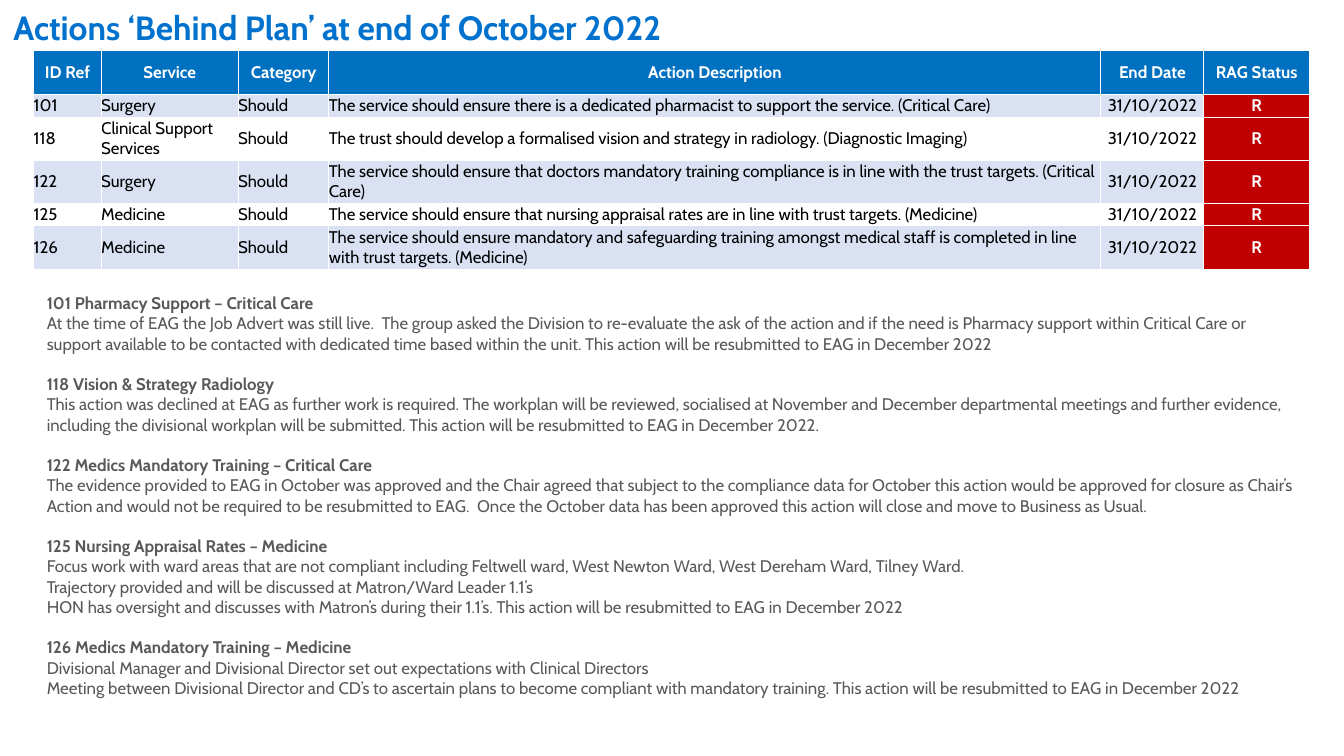
from lxml.etree import SubElement
from pptx import Presentation
from pptx.dml.color import RGBColor
from pptx.enum.text import MSO_ANCHOR as Anchor, MSO_AUTO_SIZE as AutoSize, PP_ALIGN as Align
from pptx.oxml.ns import qn
from pptx.util import Pt

COLORS = {
    "title": "0072CE", "header": "0070C0", "band": "D9E1F2", "red": "C00000",
    "white": "FFFFFF", "black": "000000", "note": "595959",
}


def style(para, color, size=9, bold=False, align=Align.LEFT):
    para.alignment = align
    para.font.name = "Cabin"
    para.font.size = Pt(size)
    para.font.bold = bold
    para.font.color.rgb = RGBColor.from_string(COLORS[color])


def add_borders(cell):
    properties = cell._tc.get_or_add_tcPr()
    for side in ("lnL", "lnR", "lnT", "lnB"):
        line = SubElement(properties, qn(f"a:{side}"), w=str(Pt(0.5)))
        fill = SubElement(line, qn("a:solidFill"))
        SubElement(fill, qn("a:srgbClr"), val=COLORS["white"])


deck = Presentation()
deck.slide_width, deck.slide_height = Pt(720), Pt(405)
page = deck.slides.add_slide(deck.slide_layouts[5])

title = page.shapes.title
title.left, title.top, title.width, title.height = Pt(0), Pt(0), Pt(702), Pt(36)
title.text_frame.text = "Actions ‘Behind Plan’ at end of October 2022"
title.text_frame.auto_size = AutoSize.NONE
title.text_frame.vertical_anchor = Anchor.TOP
style(title.text_frame.paragraphs[0], "title", size=18, bold=True)

headers = ["ID Ref", "Service", "Category", "Action Description", "End Date", "RAG Status"]
actions = [
    ("101", "Surgery", "The service should ensure there is a dedicated pharmacist to support the service. (Critical Care)"),
    ("118", "Clinical Support Services", "The trust should develop a formalised vision and strategy in radiology. (Diagnostic Imaging)"),
    ("122", "Surgery", "The service should ensure that doctors mandatory training compliance is in line with the trust targets. (Critical Care)"),
    ("125", "Medicine", "The service should ensure that nursing appraisal rates are in line with trust targets. (Medicine)"),
    ("126", "Medicine", "The service should ensure mandatory and safeguarding training amongst medical staff is completed in line with trust targets. (Medicine)"),
]
rows = [headers] + [
    [ref, service, "Should", description, "31/10/2022", "R"]
    for ref, service, description in actions
]
column_widths = [36.2, 73.4, 48.6, 413.6, 55.2, 56.6]
row_heights = [23.7, 12.2, 23.1, 23.1, 12.2, 23.1]

table = page.shapes.add_table(
    len(rows), len(headers), Pt(18), Pt(26.8), Pt(sum(column_widths)), Pt(sum(row_heights))
).table
table.first_row = table.horz_banding = False
for column, width in zip(table.columns, column_widths):
    column.width = Pt(width)
for row, height in zip(table.rows, row_heights):
    row.height = Pt(height)

for row_index, values in enumerate(rows):
    for column_index, value in enumerate(values):
        cell = table.cell(row_index, column_index)
        cell.text = value
        cell.vertical_anchor = Anchor.MIDDLE
        cell.margin_left = cell.margin_right = cell.margin_top = cell.margin_bottom = 0
        add_borders(cell)
        is_header, is_status = row_index == 0, column_index == 5
        strong = is_header or is_status
        centered = is_header or column_index >= 4
        style(cell.text_frame.paragraphs[0], "white" if strong else "black", bold=strong,
              align=Align.CENTER if centered else Align.LEFT)
        if strong or row_index % 2:
            fill_name = "header" if is_header else "red" if is_status else "band"
            cell.fill.solid()
            cell.fill.fore_color.rgb = RGBColor.from_string(COLORS[fill_name])
        else:
            cell.fill.background()

updates = [
    ("101 Pharmacy Support – Critical Care", [
        "At the time of EAG the Job Advert was still live.  The group asked the Division to re-evaluate the ask of the action and if the need is Pharmacy support within Critical Care or support available to be contacted with dedicated time based within the unit. This action will be resubmitted to EAG in December 2022",
    ]),
    ("118 Vision & Strategy Radiology", [
        "This action was declined at EAG as further work is required. The workplan will be reviewed, socialised at November and December departmental meetings and further evidence, including the divisional workplan will be submitted. This action will be resubmitted to EAG in December 2022.",
    ]),
    ("122 Medics Mandatory Training – Critical Care", [
        "The evidence provided to EAG in October was approved and the Chair agreed that subject to the compliance data for October this action would be approved for closure as Chair’s Action and would not be required to be resubmitted to EAG.  Once the October data has been approved this action will close and move to Business as Usual.",
    ]),
    ("125 Nursing Appraisal Rates – Medicine", [
        "Focus work with ward areas that are not compliant including Feltwell ward, West Newton Ward, West Dereham Ward, Tilney Ward.",
        "Trajectory provided and will be discussed at Matron/Ward Leader 1.1’s",
        "HON has oversight and discusses with Matron’s during their 1.1’s. This action will be resubmitted to EAG in December 2022",
    ]),
    ("126 Medics Mandatory Training – Medicine", [
        "Divisional Manager and Divisional Director set out expectations with Clinical Directors",
        "Meeting between Divisional Director and CD’s to ascertain plans to become compliant with mandatory training. This action will be resubmitted to EAG in December 2022",
    ]),
]
box = page.shapes.add_textbox(Pt(18), Pt(153.4), Pt(684), Pt(225))
frame = box.text_frame
frame.word_wrap = True
for update_index, (heading, notes) in enumerate(updates):
    para = frame.add_paragraph() if update_index else frame.paragraphs[0]
    para.text = heading
    if update_index:
        para.space_before = Pt(10.9)
    style(para, "note", bold=True)
    for note in notes:
        para = frame.add_paragraph()
        para.text = note
        style(para, "note")

deck.save("out.pptx")
